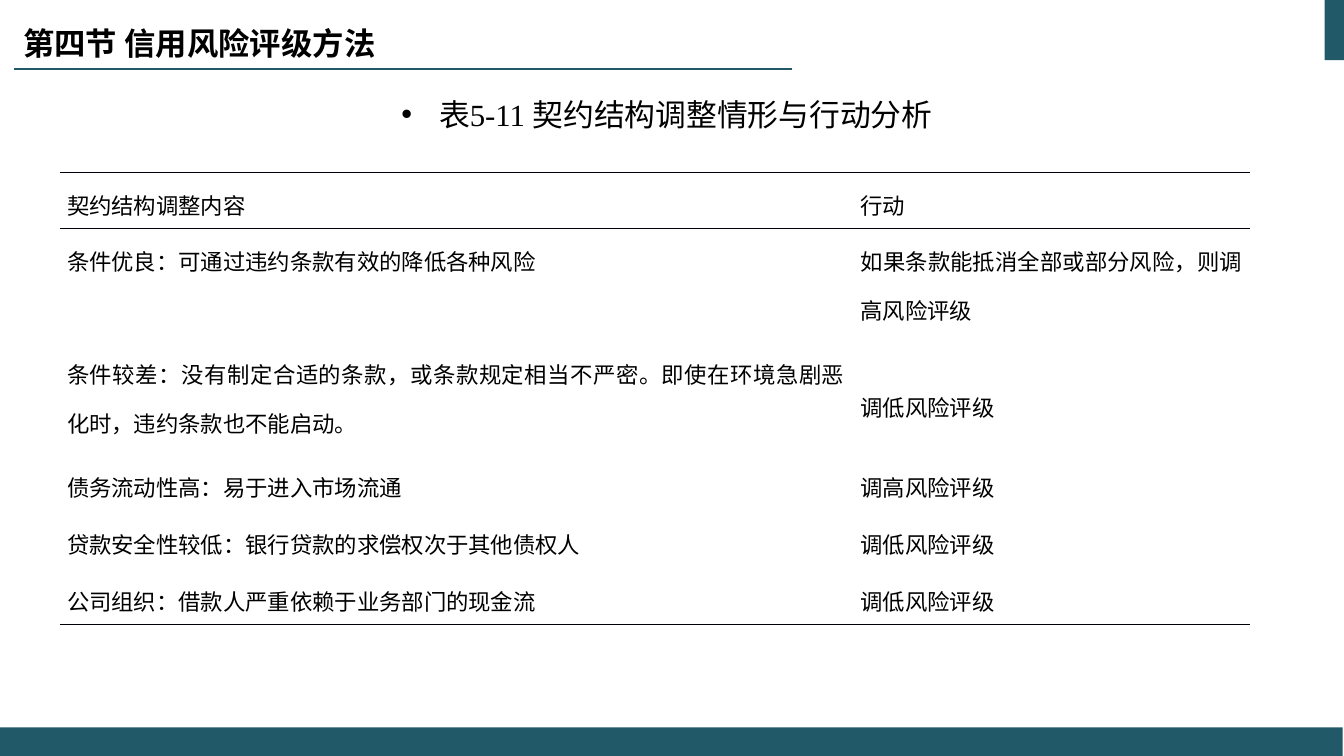
"""Build the slide on covenant structure adjustments and rating actions."""
import dataclasses

import lxml.etree
import pptx
import pptx.dml.color
import pptx.enum.shapes
import pptx.enum.text
import pptx.oxml
import pptx.oxml.ns
import pptx.util

Cm = pptx.util.Cm
Pt = pptx.util.Pt
RGB = pptx.dml.color.RGBColor
Align = pptx.enum.text.PP_ALIGN
Anchor = pptx.enum.text.MSO_ANCHOR
qn = pptx.oxml.ns.qn


@dataclasses.dataclass(frozen=True)
class Theme:
    teal: RGB = RGB(0x21, 0x59, 0x68)
    text: RGB = RGB(0, 0, 0)
    rule: str = "000008"
    chinese: str = "Noto Sans CJK SC"
    latin: str = "Times New Roman"
    title_size: Pt = Pt(28)
    caption_size: Pt = Pt(22)
    table_size: Pt = Pt(16)
    accent_width: Pt = Pt(1.5)
    rule_width: Pt = Pt(1)


theme = Theme()


def format_text(paragraph, size, font_name, align, spacing=None):
    paragraph.alignment = align
    if spacing:
        paragraph.line_spacing = spacing
    for run in paragraph.runs:
        run.font.size = size
        run.font.name = font_name
        run.font.color.rgb = theme.text
        east_asian = lxml.etree.SubElement(run._r.get_or_add_rPr(), qn("a:ea"))
        east_asian.set("typeface", theme.chinese)


def set_borders(cell, ruled_sides):
    properties = cell._tc.get_or_add_tcPr()
    for position, side in enumerate(("lnL", "lnR", "lnT", "lnB")):
        border = lxml.etree.Element(qn(f"a:{side}"), w=str(int(theme.rule_width)))
        if side in ruled_sides:
            fill = lxml.etree.SubElement(border, qn("a:solidFill"))
            lxml.etree.SubElement(fill, qn("a:srgbClr"), val=theme.rule)
        else:
            lxml.etree.SubElement(border, qn("a:noFill"))
        properties.insert(position, border)


presentation = pptx.Presentation()
presentation.slide_width = Cm(33.87)
presentation.slide_height = Cm(19.05)
slide = presentation.slides.add_slide(presentation.slide_layouts[5])

bars = [(33.38, 0, 0.49, 1.52), (0, 18.33, 33.84, 0.72)]
for bounds in bars:
    bar = slide.shapes.add_shape(
        pptx.enum.shapes.MSO_SHAPE.RECTANGLE, *map(Cm, bounds))
    bar.shadow.inherit = False
    bar.fill.solid()
    bar.fill.fore_color.rgb = theme.teal
    bar.line.fill.background()

underline = slide.shapes.add_connector(
    pptx.enum.shapes.MSO_CONNECTOR.STRAIGHT, Cm(19.97), Cm(1.73), Cm(0.36), Cm(1.73))
underline.line.color.rgb = theme.teal
underline.line.width = theme.accent_width
lxml.etree.SubElement(underline._element.spPr, qn("a:effectLst"))

title = slide.shapes.title
title.left, title.top, title.width, title.height = Cm(0.33), Cm(-0.08), Cm(21.11), Cm(2.16)
title.text_frame.text = "第四节 信用风险评级方法"
title.text_frame.vertical_anchor = Anchor.MIDDLE
title.text_frame.auto_size = pptx.enum.text.MSO_AUTO_SIZE.NONE
heading = title.text_frame.paragraphs[0]
format_text(heading, theme.title_size, theme.chinese, Align.LEFT)
heading.runs[0].font.bold = True
heading.runs[0]._r.get_or_add_rPr().set("cap", "small")

caption_box = slide.shapes.add_textbox(Cm(0.28), Cm(1.73), Cm(33.05), Cm(1.75))
caption_box.text_frame.word_wrap = True
caption_box.text_frame.text = "表5-11 契约结构调整情形与行动分析"
caption = caption_box.text_frame.paragraphs[0]
format_text(caption, theme.caption_size, theme.latin, Align.CENTER, 1.6)
caption_properties = caption._p.get_or_add_pPr()
caption_properties.set("marL", str(Cm(0.95)))
caption_properties.set("indent", str(Cm(-0.95)))
lxml.etree.SubElement(caption_properties, qn("a:buFont"), typeface="Arial")
lxml.etree.SubElement(caption_properties, qn("a:buChar"), char="•")

adjustments = [
    ("契约结构调整内容", "行动"),
    ("条件优良：可通过违约条款有效的降低各种风险",
     "如果条款能抵消全部或部分风险，则调高风险评级"),
    ("条件较差：没有制定合适的条款，或条款规定相当不严密。即使在环境急剧恶化时，违约条款也不能启动。",
     "调低风险评级"),
    ("债务流动性高：易于进入市场流通", "调高风险评级"),
    ("贷款安全性较低：银行贷款的求偿权次于其他债权人", "调低风险评级"),
    ("公司组织：借款人严重依赖于业务部门的现金流", "调低风险评级"),
]
line_counts = [1, 2, 2, 1, 1, 1]
row_height = 1.425
ruled_rows = {0: ("lnT", "lnB"), 1: ("lnT",), len(adjustments) - 1: ("lnB",)}

table = slide.shapes.add_table(
    len(adjustments), 2, Cm(1.5), Cm(4.34), Cm(30), Cm(row_height * sum(line_counts))).table
table.first_row = False
table.horz_banding = False
for column, width in zip(table.columns, (20, 10)):
    column.width = Cm(width)
for row_index, texts in enumerate(adjustments):
    table.rows[row_index].height = Cm(row_height * line_counts[row_index])
    for column_index, text in enumerate(texts):
        cell = table.cell(row_index, column_index)
        cell.text_frame.text = text
        cell.margin_left = cell.margin_right = Cm(0.19)
        cell.margin_top = cell.margin_bottom = 0
        cell.fill.background()
        set_borders(cell, ruled_rows.get(row_index, ()))
        format_text(cell.text_frame.paragraphs[0], theme.table_size, theme.chinese,
                    Align.JUSTIFY, 1.5)
table.cell(2, 1).vertical_anchor = Anchor.MIDDLE

presentation.save("out.pptx")
